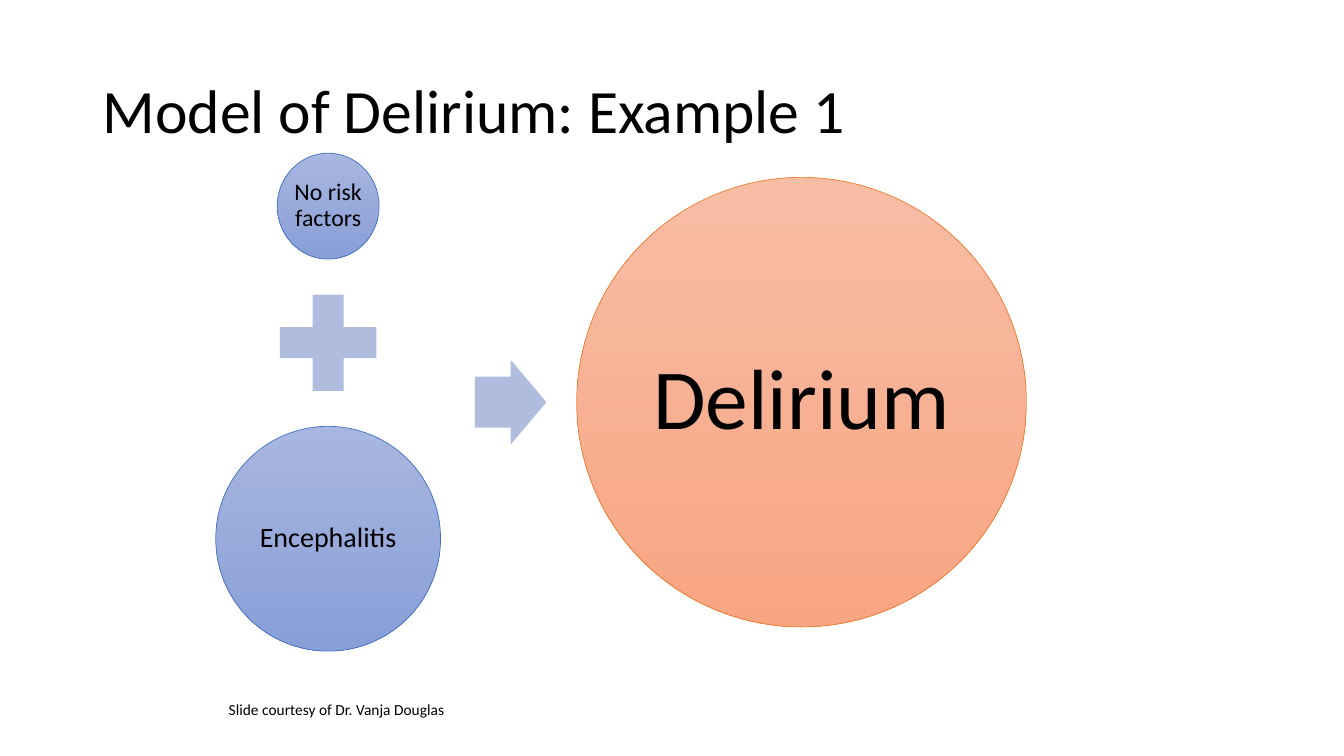
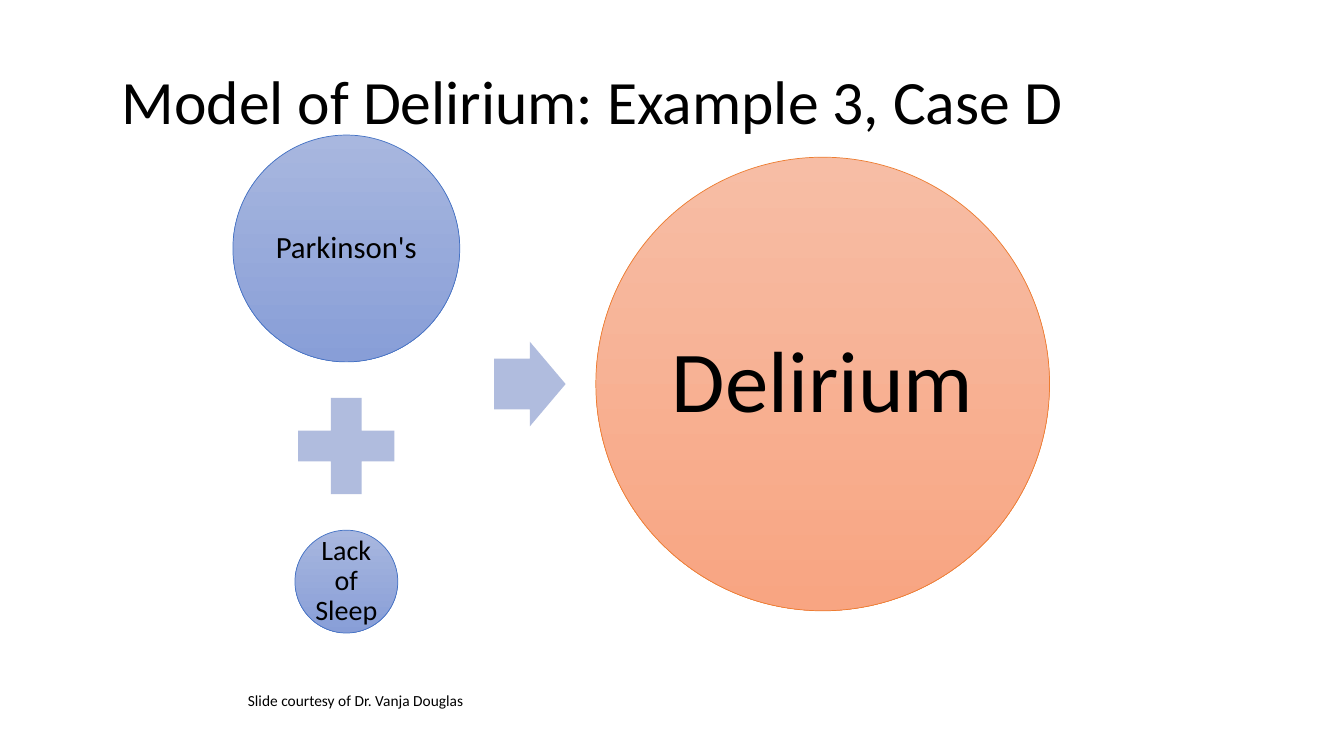
from pptx import Presentation
from pptx.dml.color import RGBColor
from pptx.enum.shapes import MSO_SHAPE as Preset
from pptx.enum.text import MSO_ANCHOR as Anchor, PP_ALIGN as Align
from pptx.util import Pt

EMU_PER_PX = 9144  # 100 px to the inch
FONT = "Calibri"
COLOURS = {
    "text": "000000",
    "operator": "B0BCDE",
    "cause_top": "A8B7DF",
    "cause_bottom": "889ED7",
    "cause_line": "4472C4",
    "outcome_top": "F7BDA5",
    "outcome_bottom": "F8A582",
    "outcome_line": "ED7D31",
}
PLUS_SIZE = 130
ARROW_GAP_LEFT, ARROW_GAP_RIGHT = 34, 30
ARROW_WIDTH, ARROW_HEIGHT = 71, 84
DIAGRAM_HEIGHT = 494

# Cause: label, width, height, text size, inset
SLIDES = [
    {
        "title": "Model of Delirium: Example 1",
        "title_at": (92, 40),
        "diagram_at": (214, 152),
        "causes": [("No risk factors", 101, 105, 17, 2), ("Encephalitis", 223, 223, 20, 3)],
        "outcome": ("Delirium", 61, 8),
        "credit_at": (217, 690),
    },
    {
        "title": "Model of Delirium: Example 3, Case D",
        "title_at": (111, 31),
        "diagram_at": (231, 134),
        "causes": [("Parkinson's", 225, 225, 22, 3), ("Lack of Sleep", 102, 102, 20, 3)],
        "outcome": ("Delirium", 62, 9),
        "credit_at": (236, 681),
    },
]


def px(*lengths):
    return [round(length * EMU_PER_PX) for length in lengths]


def colour(name):
    return RGBColor.from_string(COLOURS[name])


def write(shape, text, size, align=Align.LEFT, line_spacing=None, anchor=Anchor.MIDDLE):
    frame = shape.text_frame
    frame.word_wrap = True
    frame.vertical_anchor = anchor
    frame.text = text
    paragraph = frame.paragraphs[0]
    paragraph.alignment = align
    paragraph.line_spacing = line_spacing
    font = paragraph.runs[0].font
    font.name, font.size = FONT, Pt(size)
    font.color.rgb = colour("text")


def add_title(slide, text, left, top):
    box = slide.shapes.add_textbox(*px(left, top, 1150, 145))
    write(box, text, 44, line_spacing=0.9)


def add_credit(slide, left, top):
    box = slide.shapes.add_textbox(*px(left, top, 399, 29))
    write(box, "Slide courtesy of Dr. Vanja Douglas", 11, anchor=Anchor.TOP)


def add_circle(slide, box, role, text, size, inset):
    """Add a shaded circle whose colours come from its role: cause or outcome."""
    circle = slide.shapes.add_shape(Preset.OVAL, *px(*box))
    circle.shadow.inherit = False
    circle.fill.gradient()
    circle.fill.gradient_angle = 270
    for stop, end in zip(circle.fill.gradient_stops, ("top", "bottom")):
        stop.color.rgb = colour(f"{role}_{end}")
    circle.line.color.rgb = colour(f"{role}_line")
    circle.line.width = Pt(0.5)
    frame = circle.text_frame
    frame.margin_left, frame.margin_top, frame.margin_right, frame.margin_bottom = px(*[inset] * 4)
    write(circle, text, size, Align.CENTER, 0.9)


def add_operator(slide, preset, box):
    operator = slide.shapes.add_shape(preset, *px(*box))
    operator.shadow.inherit = False
    operator.fill.solid()
    operator.fill.fore_color.rgb = colour("operator")
    operator.line.fill.background()
    return operator


def add_causes(slide, left, top, width, causes):
    """Stack two causes with a plus between them, centred and evenly spaced."""
    heights = [cause[2] for cause in causes]
    gap = (DIAGRAM_HEIGHT - sum(heights) - PLUS_SIZE) / 2
    tops = (top, top + DIAGRAM_HEIGHT - heights[1])
    centre = left + width / 2
    for (text, cause_width, height, size, inset), cause_top in zip(causes, tops):
        box = (centre - cause_width / 2, cause_top, cause_width, height)
        add_circle(slide, box, "cause", text, size, inset)
    plus_box = (centre - PLUS_SIZE / 2, top + heights[0] + gap, PLUS_SIZE, PLUS_SIZE)
    add_operator(slide, Preset.MATH_PLUS, plus_box)


def add_diagram(slide, left, top, causes, outcome):
    """Causes lead to an outcome circle twice as wide as the larger cause."""
    width = max(cause[1] for cause in causes)
    middle = top + DIAGRAM_HEIGHT / 2
    add_causes(slide, left, top, width, causes)

    arrow_left = left + width + ARROW_GAP_LEFT
    arrow_box = (arrow_left, middle - ARROW_HEIGHT / 2, ARROW_WIDTH, ARROW_HEIGHT)
    arrow = add_operator(slide, Preset.RIGHT_ARROW, arrow_box)
    arrow.adjustments[0], arrow.adjustments[1] = 0.6, 0.5

    diameter = 2 * width
    outcome_left = arrow_left + ARROW_WIDTH + ARROW_GAP_RIGHT
    outcome_box = (outcome_left, middle - width, diameter, diameter)
    add_circle(slide, outcome_box, "outcome", *outcome)


def main():
    presentation = Presentation()
    presentation.slide_width, presentation.slide_height = px(1333, 750)
    for content in SLIDES:
        slide = presentation.slides.add_slide(presentation.slide_layouts[6])
        add_title(slide, content["title"], *content["title_at"])
        add_diagram(slide, *content["diagram_at"], content["causes"], content["outcome"])
        add_credit(slide, *content["credit_at"])
    presentation.save("out.pptx")


if __name__ == "__main__":
    main()
